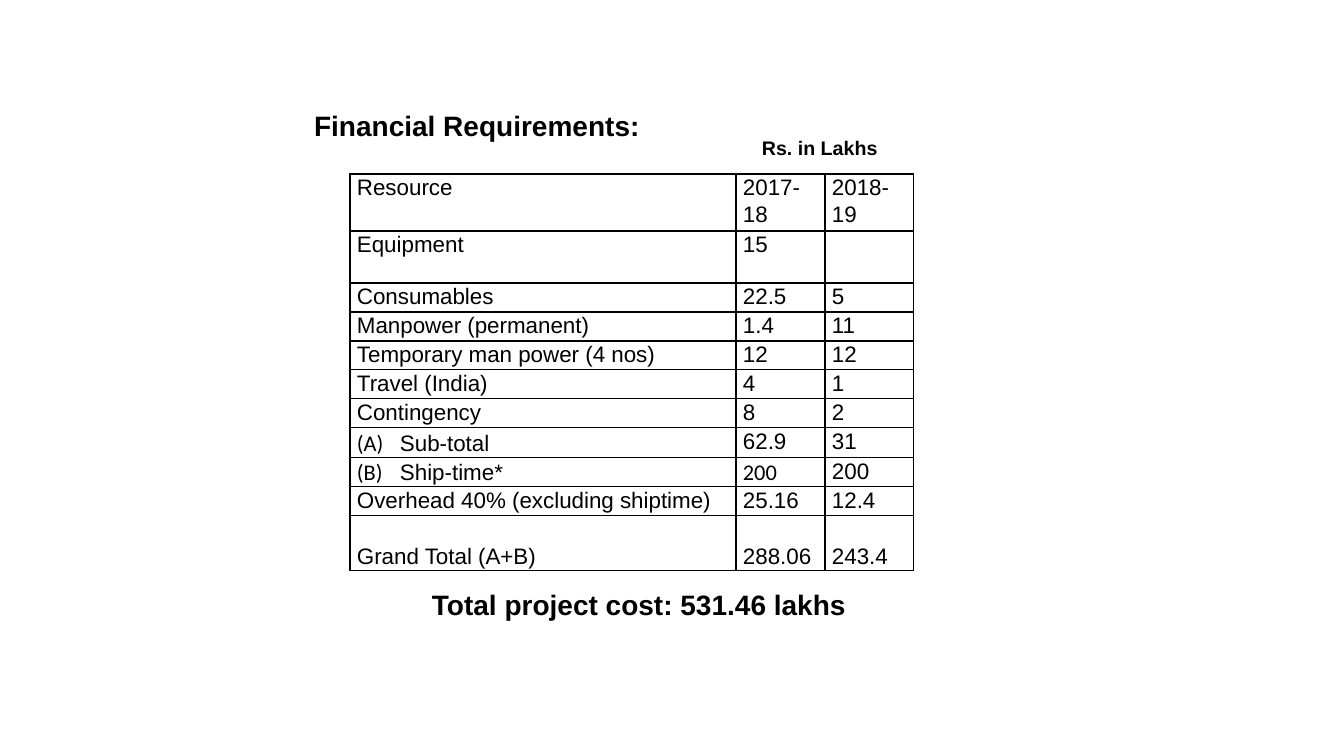
from dataclasses import dataclass

from lxml import etree
from pptx import Presentation
from pptx.dml.color import RGBColor
from pptx.enum import text
from pptx.oxml import ns
from pptx.util import Pt

PX = 9144000 / 1008


@dataclass(frozen=True)
class Theme:
    ink: RGBColor = RGBColor(0, 0, 0)
    font: str = "Arial"
    label_font: str = "Calibri"
    heading: int = 20
    unit: int = 14
    body: int = 16
    spacer: int = 8
    rule: int = 1


THEME = Theme()

COLUMNS = [386, 89, 89]
ROW_HEIGHTS = [57, 52] + [29] * 8 + [27, 28]
SPACER_ROW = 10
LABEL_INDENT = 43
ROWS = [
    ("Resource", "2017-18", "2018-19"),
    ("Equipment", "15", ""),
    ("Consumables", "22.5", "5"),
    ("Manpower (permanent)", "1.4", "11"),
    ("Temporary man power (4 nos)", "12", "12"),
    ("Travel (India)", "4", "1"),
    ("Contingency", "8", "2"),
    ("(A)\tSub-total", "62.9", "31"),
    ("(B)\tShip-time*", "200", "200"),
    ("Overhead 40% (excluding shiptime)", "25.16", "12.4"),
    ("", "", ""),
    ("Grand Total (A+B)", "288.06", "243.4"),
]
CALIBRI_CELL = (8, 1)


def px(n):
    return round(n * PX)


def format_run(r, size, name=THEME.font, bold=False):
    r.font.name = name
    r.font.size = Pt(size)
    r.font.bold = bold
    r.font.color.rgb = THEME.ink


def indent(p, left, first):
    pPr = p._p.get_or_add_pPr()
    pPr.set("marL", str(px(left)))
    pPr.set("indent", str(px(first)))


def fill_heading(sp, words, size, wrap):
    tf = sp.text_frame
    tf.text = words
    tf.word_wrap = wrap
    tf.auto_size = text.MSO_AUTO_SIZE.NONE
    tf.vertical_anchor = text.MSO_ANCHOR.TOP
    p = tf.paragraphs[0]
    p.alignment = text.PP_ALIGN.LEFT
    format_run(p.runs[0], size, bold=True)
    return p


def add_title(s, words, x, y, w, h):
    sp = s.shapes.title
    sp.left, sp.top, sp.width, sp.height = map(px, (x, y, w, h))
    fill_heading(sp, words, THEME.heading, True)


def add_note(s, words, size, x, y, w, h):
    sp = s.shapes.add_textbox(*map(px, (x, y, w, h)))
    return fill_heading(sp, words, size, False)


def set_border(cell, side, visible):
    tcPr = cell._tc.get_or_add_tcPr()
    ln = etree.SubElement(tcPr, ns.qn(f"a:ln{side}"), w=str(Pt(THEME.rule)))
    if visible:
        solid = etree.SubElement(ln, ns.qn("a:solidFill"))
        etree.SubElement(solid, ns.qn("a:srgbClr"), val=str(THEME.ink))
    else:
        etree.SubElement(ln, ns.qn("a:noFill"))


def fill_cell(cell, words, font):
    cell.margin_left = cell.margin_right = px(7)
    cell.margin_top = cell.margin_bottom = 0
    p = cell.text_frame.paragraphs[0]
    if not words:
        p._p.get_or_add_endParaRPr().set("sz", str(THEME.spacer * 100))
        return
    p.alignment = text.PP_ALIGN.JUSTIFY
    p.line_spacing = 1.07
    label, tab, name = words.partition("\t")
    if tab:
        indent(p, LABEL_INDENT, -LABEL_INDENT)
        p.text = label + tab
        format_run(p.runs[0], THEME.body, THEME.label_font)
        r = p.add_run()
        r.text = name
        format_run(r, THEME.body)
    else:
        p.text = words
        format_run(p.runs[0], THEME.body, font)


def add_cost_table(s, x, y):
    frame = s.shapes.add_table(
        len(ROWS), len(COLUMNS),
        *map(px, (x, y, sum(COLUMNS), sum(ROW_HEIGHTS))))
    table = frame.table
    table.first_row = table.horz_banding = False
    for column, width in zip(table.columns, COLUMNS):
        column.width = px(width)
    for i, (height, row) in enumerate(zip(ROW_HEIGHTS, ROWS)):
        table.rows[i].height = px(height)
        for j, words in enumerate(row):
            cell = table.cell(i, j)
            font = THEME.label_font if (i, j) == CALIBRI_CELL else THEME.font
            fill_cell(cell, words, font)
            for side in "LRTB":
                hidden = (i, side) in {(SPACER_ROW, "B"), (SPACER_ROW + 1, "T")}
                set_border(cell, side, not hidden)
            cell.fill.background()


def main():
    prs = Presentation()
    prs.slide_width, prs.slide_height = px(1344), px(756)
    s = prs.slides.add_slide(prs.slide_layouts[5])
    add_title(s, "Financial Requirements:", 304, 103, 527, 78)
    add_note(s, "Total project cost: 531.46 lakhs", THEME.heading,
             422, 583, 437, 44)
    unit = add_note(s, "Rs. in Lakhs", THEME.unit, 702, 131, 187, 34)
    indent(unit, 50, 0)
    add_cost_table(s, 350, 174)
    prs.save("out.pptx")


if __name__ == "__main__":
    main()
